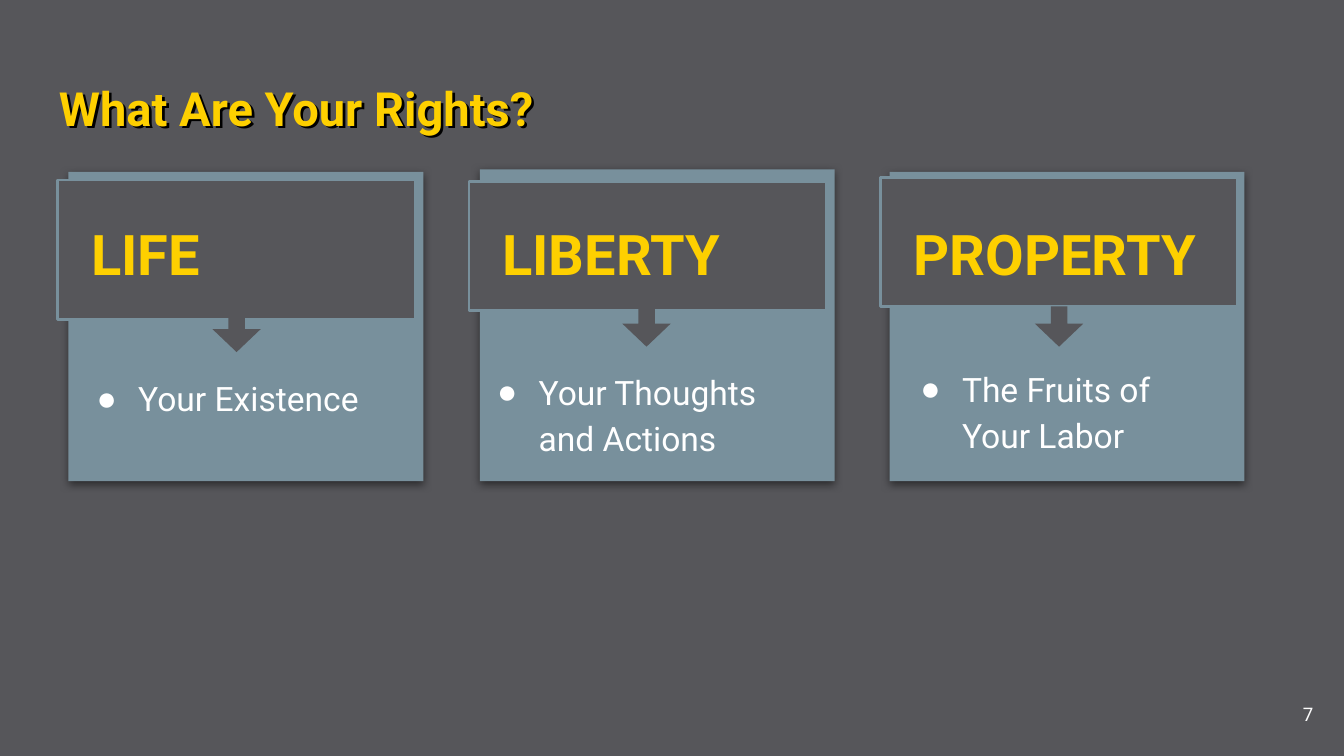
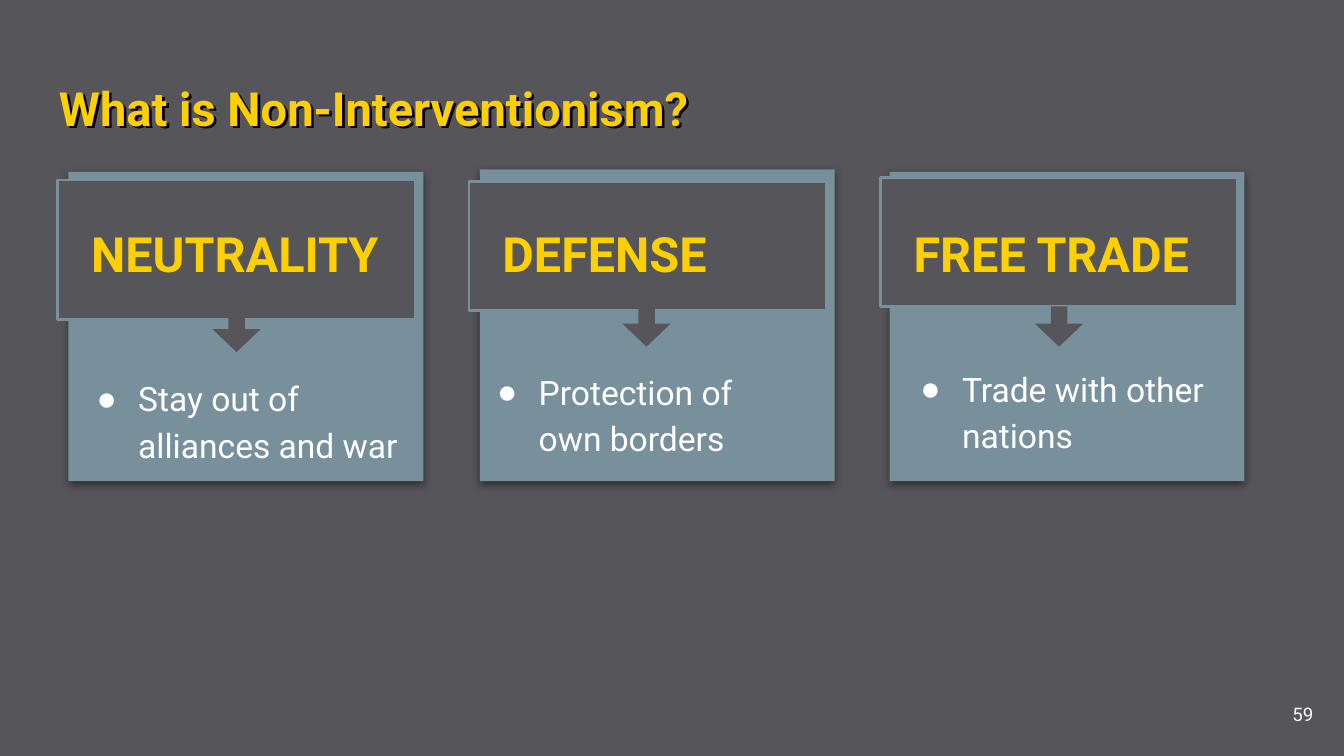
from lxml import etree
from pptx import Presentation
from pptx import util as u
from pptx.dml.color import RGBColor
from pptx.enum import shapes, text
from pptx.oxml import ns

SLIDES = [
    {"title": "What Are Your Rights?", "number": "7", "heading_size": 30,
     "cards": [("LIFE", "Your Existence"),
               ("LIBERTY", "Your Thoughts and Actions"),
               ("PROPERTY", "The Fruits of Your Labor")]},
    {"title": "What is Non-Interventionism?", "number": "59", "heading_size": 26,
     "cards": [("NEUTRALITY", "Stay out of alliances and war"),
               ("DEFENSE", "Protection of own borders"),
               ("FREE TRADE", "Trade with other nations")]},
]

GREY, SLATE, GOLD, WHITE, PALE = "56565A", "78909C", "FED000", "FFFFFF", "FCFCFC"
FONT = "Roboto"
INSET = 0.1
CARD_WIDTH, CARD_BOTTOM = 2.64, 3.58
BAND_WIDTH, ARROW_LENGTH, ARROW_SPAN = 2.66, 0.3, 0.36

COLUMNS = [
    {"card": (0.51, 1.28), "band": (0.43, 1.34, 1.04), "arrow": (1.61, 2.29),
     "heading": 0.58, "point": (0.43, 2.67, 1.22)},
    {"card": (3.57, 1.26), "band": (3.49, 1.35, 0.96), "arrow": (4.66, 2.25),
     "heading": 3.64, "point": (3.41, 2.62, 1.22)},
    {"card": (6.62, 1.28), "band": (6.55, 1.32, 0.96), "arrow": (7.73, 2.25),
     "heading": 6.7, "point": (6.56, 2.6, 1.07)},
]


def color(value):
    return RGBColor.from_string(value)


def add_xml(parent, tag, **attributes):
    return etree.SubElement(parent, ns.qn(tag), attributes)


def add_shadow(part, blur, distance, angle, alpha):
    part.shadow.inherit = False
    effects = part._element.spPr.find(ns.qn("a:effectLst"))
    shadow = add_xml(effects, "a:outerShdw", blurRad=str(u.Pt(blur)), dist=str(u.Pt(distance)),
                     dir=str(angle * 60000), algn="bl", rotWithShape="0")
    black = add_xml(shadow, "a:srgbClr", val="000000")
    add_xml(black, "a:alpha", val=str(alpha * 1000))


def add_block(slide, preset, left, top, width, height, fill, line=None):
    block = slide.shapes.add_shape(preset, *map(u.Inches, (left, top, width, height)))
    block.shadow.inherit = False
    block.fill.solid()
    block.fill.fore_color.rgb = color(fill)
    if line:
        block.line.color.rgb = color(line)
        block.line.width = u.Pt(1.5)
    else:
        block.line.fill.background()
    return block


def add_text(slide, left, top, width, height, words, size, ink, bold=False,
             anchor=text.MSO_ANCHOR.TOP, align=text.PP_ALIGN.LEFT, bottom=INSET):
    box = slide.shapes.add_textbox(*map(u.Inches, (left, top, width, height)))
    frame = box.text_frame
    frame.word_wrap = True
    frame.vertical_anchor = anchor
    frame.margin_left = frame.margin_right = frame.margin_top = u.Inches(INSET)
    frame.margin_bottom = u.Inches(bottom)
    paragraph = frame.paragraphs[0]
    paragraph.alignment = align
    run = paragraph.add_run()
    run.text = words
    run.font.size = u.Pt(size)
    run.font.name = FONT
    run.font.bold = bold
    run.font.color.rgb = color(ink)
    return box


def add_bullet(paragraph):
    paragraph.line_spacing = 1.15
    properties = paragraph._p.get_or_add_pPr()
    properties.set("marL", str(u.Inches(0.5)))
    properties.set("indent", str(u.Inches(-0.31)))
    add_xml(add_xml(properties, "a:buClr"), "a:srgbClr", val=WHITE)
    add_xml(properties, "a:buFont", typeface="Arial")
    add_xml(properties, "a:buChar", char="●")


def add_card(slide, column, heading, point, heading_size):
    rectangle = shapes.MSO_SHAPE.RECTANGLE
    card_left, card_top = column["card"]
    card = add_block(slide, rectangle, card_left, card_top,
                     CARD_WIDTH, CARD_BOTTOM - card_top, SLATE)
    add_shadow(card, 4.5, 1.5, 90, 50)

    band_left, band_top, band_height = column["band"]
    add_block(slide, rectangle, band_left, band_top, BAND_WIDTH, band_height, GREY, SLATE)

    arrow = add_block(slide, shapes.MSO_SHAPE.RIGHT_ARROW, *column["arrow"],
                      ARROW_LENGTH, ARROW_SPAN, GREY)
    arrow.rotation = 90
    arrow.adjustments[0], arrow.adjustments[1] = 0.34, 0.57

    add_text(slide, column["heading"], 1.42, 2.36, 1.42, heading, heading_size, GOLD, bold=True,
             anchor=text.MSO_ANCHOR.MIDDLE, bottom=0.59)
    point_left, point_top, point_height = column["point"]
    detail = add_text(slide, point_left, point_top, CARD_WIDTH, point_height, point, 18, WHITE)
    add_bullet(detail.text_frame.paragraphs[0])


def add_frame(slide, title, number):
    slide.background.fill.solid()
    slide.background.fill.fore_color.rgb = color(GREY)
    heading = add_text(slide, 0.34, 0.49, 9.32, 0.63, title, 25.2, GOLD, bold=True)
    add_shadow(heading, 0, 2, 45, 100)
    add_text(slide, 9.27, 5.1, 0.6, 0.43, number, 10, PALE,
             anchor=text.MSO_ANCHOR.MIDDLE, align=text.PP_ALIGN.RIGHT)


def main():
    deck = Presentation()
    deck.slide_width = u.Inches(10)
    deck.slide_height = deck.slide_width * 9 // 16
    for content in SLIDES:
        slide = deck.slides.add_slide(deck.slide_layouts[6])
        add_frame(slide, content["title"], content["number"])
        for column, (heading, point) in zip(COLUMNS, content["cards"]):
            add_card(slide, column, heading, point, content["heading_size"])
    deck.save("out.pptx")


if __name__ == "__main__":
    main()
